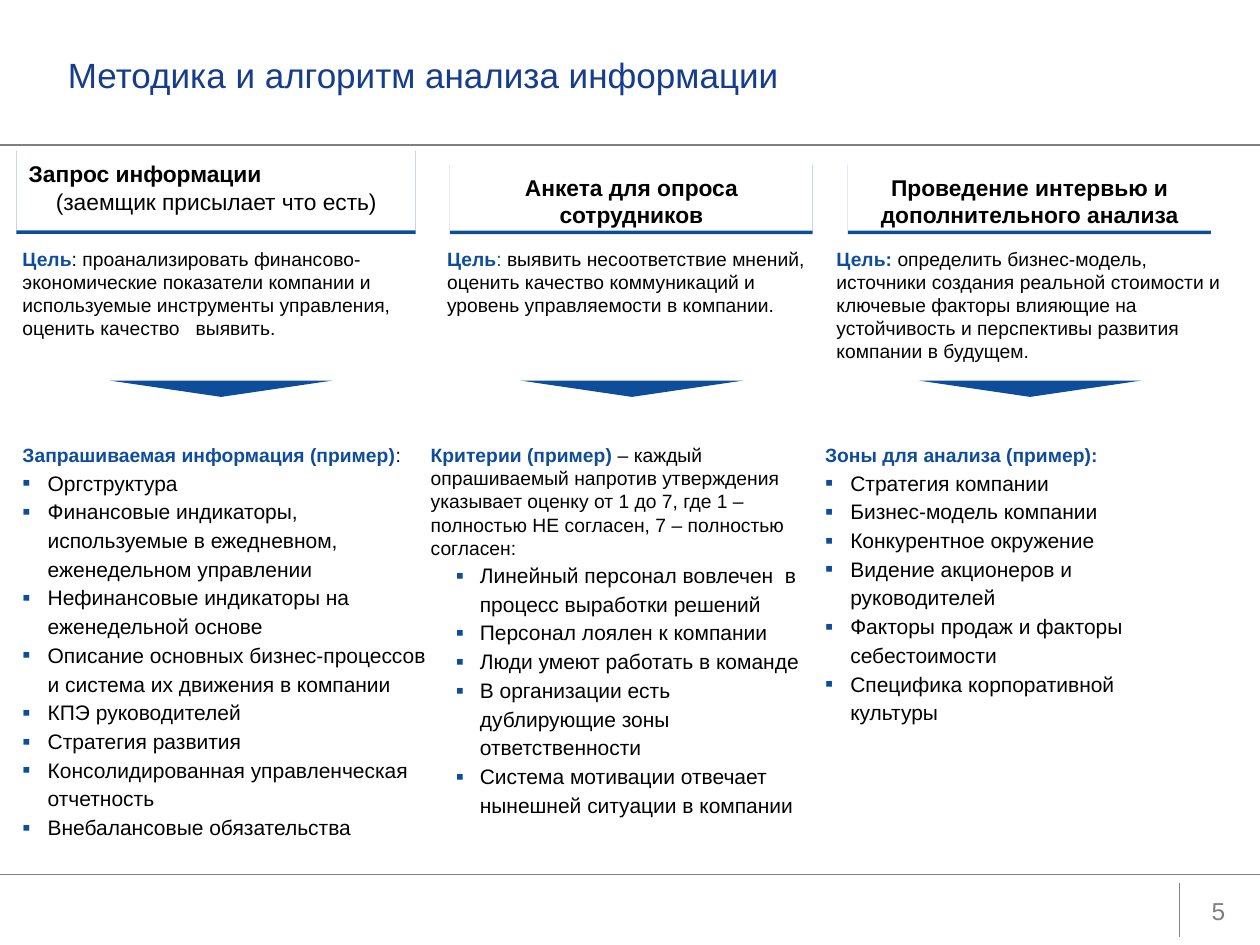
from lxml.etree import SubElement
from pptx import Presentation
from pptx.dml.color import RGBColor
from pptx.enum.shapes import MSO_CONNECTOR, MSO_SHAPE
from pptx.enum.text import MSO_ANCHOR, MSO_AUTO_SIZE, PP_ALIGN
from pptx.oxml.ns import qn
from pptx.util import Inches, Pt

BLUE, BLACK, WHITE = "0E4D99", "000000", "FFFFFF"
TITLE = "Методика и алгоритм анализа информации"
LEFT, MID = PP_ALIGN.LEFT, PP_ALIGN.CENTER

# Runs are (text, colour, bold); boxes are (left, top, width, height).
COLS = [
    {
        "head": [("Запрос информации", True, LEFT),
                 ("(заемщик присылает что есть)", False, MID)],
        "head_box": (0.13, 1.17, 3.17, 0.66),
        "goal": [("Цель", BLUE, True),
                 (": проанализировать финансово-экономические показатели компании "
                  "и используемые инструменты управления, оценить качество   выявить.",
                  BLACK, False)],
        "goal_box": (0.08, 1.91, 3.45, 0.84),
        "arrow": 0.87,
        "lead": [("Запрашиваемая информация (пример)", BLUE, True), (":", BLACK, False)],
        "list": ["Оргструктура",
                 "Финансовые индикаторы, используемые в ежедневном, еженедельном управлении",
                 "Нефинансовые индикаторы на еженедельной основе",
                 "Описание основных бизнес-процессов и система их движения в компании",
                 "КПЭ руководителей",
                 "Стратегия развития",
                 "Консолидированная управленческая отчетность",
                 "Внебалансовые обязательства"],
        "list_box": (0.08, 3.47, 3.45, 3.28),
        "level": 0,
    },
    {
        "head": [("Анкета для опроса сотрудников", True, MID)],
        "head_box": (3.57, 1.28, 2.88, 0.55),
        "goal": [("Цель", BLUE, True), (": ", BLUE, False),
                 ("выявить несоответствие мнений, оценить качество коммуникаций "
                  "и уровень управляемости в компании.", BLACK, False)],
        "goal_box": (3.45, 1.91, 3.16, 0.66),
        "arrow": 4.13,
        "lead": [("Критерии (пример)", BLUE, True),
                 (" – каждый опрашиваемый напротив утверждения указывает оценку "
                  "от 1 до 7, где 1 – полностью НЕ согласен, 7 – полностью согласен:",
                  BLACK, False)],
        "list": ["Линейный персонал вовлечен  в процесс выработки решений",
                 "Персонал лоялен к компании",
                 "Люди умеют работать в команде",
                 "В организации есть дублирующие зоны ответственности",
                 "Система мотивации отвечает нынешней ситуации в компании"],
        "list_box": (3.32, 3.47, 3.16, 3.08),
        "level": 1,
    },
    {
        "head": [("Проведение интервью и дополнительного анализа", True, MID)],
        "head_box": (6.73, 1.28, 2.88, 0.55),
        "goal": [("Цель: ", BLUE, True),
                 ("определить бизнес-модель, источники создания реальной стоимости "
                  "и ключевые факторы влияющие на устойчивость и перспективы развития "
                  "компании в будущем.", BLACK, False)],
        "goal_box": (6.54, 1.91, 3.42, 1.03),
        "arrow": 7.29,
        "lead": [("Зоны для анализа (пример):", BLUE, True)],
        "list": ["Стратегия компании",
                 "Бизнес-модель компании",
                 "Конкурентное окружение",
                 "Видение акционеров и руководителей",
                 "Факторы продаж и факторы себестоимости",
                 "Специфика корпоративной культуры"],
        "list_box": (6.45, 3.47, 2.95, 2.36),
        "level": 0,
    },
]
RULES = [((0, 1.15), (10, 1.15), "808080", 1),
         ((0, 6.94), (10, 6.94), "808080", 1),
         ((9.36, 7.01), (9.36, 7.44), "858585", 0.75)]
INDENT = [(0.2, -0.2), (0.39, -0.19)]  # margin and first line, by level

prs = Presentation()
prs.slide_width, prs.slide_height = Inches(10), Inches(7.5)
slide = prs.slides.add_slide(prs.slide_layouts[6])
shapes = slide.shapes


def rgb(code):
    return RGBColor.from_string(code)


def style(font, size, color=None, bold=None):
    font.name, font.size = "Arial", Pt(size)
    if color:
        font.color.rgb = rgb(color)
    if bold is not None:
        font.bold = bold


def shape(kind, box, fill):
    item = shapes.add_shape(kind, *map(Inches, box))
    item.shadow.inherit = False
    item.fill.solid()
    item.fill.fore_color.rgb = rgb(fill)
    item.line.fill.background()
    return item


def frame(item, anchor, inset=None):
    """Set up the text frame of a shape and return it."""
    text = item.text_frame
    text.word_wrap, text.vertical_anchor = True, anchor
    if inset is not None:
        text.margin_left = text.margin_right = Inches(inset)
        text.margin_top = text.margin_bottom = Inches(inset)
    return text


def textbox(box, anchor=MSO_ANCHOR.TOP):
    return frame(shapes.add_textbox(*map(Inches, box)), anchor)


def mixed(para, runs):
    """Fill a paragraph with runs of differing colour and weight."""
    style(para.font, 11)
    for words, color, bold in runs:
        run = para.add_run()
        run.text = words
        style(run.font, 11, color, bold)


def bullet(para, level):
    para.level = level
    para.line_spacing = 1.14
    props = para._p.get_or_add_pPr()
    margin, first = INDENT[level]
    props.set("marL", str(Inches(margin)))
    props.set("indent", str(Inches(first)))
    color = SubElement(props, qn("a:buClr"))
    SubElement(color, qn("a:srgbClr"), val=BLUE)
    SubElement(props, qn("a:buSzPct"), val="110000")
    SubElement(props, qn("a:buFont"), typeface="Arial")
    SubElement(props, qn("a:buChar"), char="▪")


def underline(item):
    """Give a shape a sharp blue shadow just below it."""
    effects = item._element.spPr.find(qn("a:effectLst"))
    cast = SubElement(effects, qn("a:outerShdw"), blurRad="0", dist=str(Pt(2)),
                      dir="5400000", algn="ctr", rotWithShape="0")
    SubElement(cast, qn("a:srgbClr"), val=BLUE)


def heading(lines, box):
    item = shape(MSO_SHAPE.RECTANGLE, box, WHITE)
    underline(item)
    text = frame(item, MSO_ANCHOR.TOP, 0.1)
    for i, (words, bold, align) in enumerate(lines):
        para = text.add_paragraph() if i else text.paragraphs[0]
        para.text, para.alignment = words, align
        style(para.font, 13, BLACK, bold)
    para.space_after = Pt(6)


def column(col):
    heading(col["head"], col["head_box"])

    goal = textbox(col["goal_box"])
    goal.auto_size = MSO_AUTO_SIZE.SHAPE_TO_FIT_TEXT
    mixed(goal.paragraphs[0], col["goal"])

    arrow = shape(MSO_SHAPE.ISOSCELES_TRIANGLE, (col["arrow"], 3.02, 1.77, 0.13), BLUE)
    arrow.rotation = 180

    text = textbox(col["list_box"])
    text.auto_size = MSO_AUTO_SIZE.SHAPE_TO_FIT_TEXT
    mixed(text.paragraphs[0], col["lead"])
    for words in col["list"]:
        para = text.add_paragraph()
        para.text = words
        bullet(para, col["level"])
        style(para.font, 12, BLACK)


for start, end, color, width in RULES:
    rule = shapes.add_connector(MSO_CONNECTOR.STRAIGHT, *map(Inches, start + end))
    rule.line.color.rgb, rule.line.width = rgb(color), Pt(width)
    SubElement(rule._element.spPr, qn("a:effectLst"))

page = shape(MSO_SHAPE.RECTANGLE, (9.42, 7.03, 0.5, 0.39), WHITE)
number = frame(page, MSO_ANCHOR.MIDDLE, 0.05).paragraphs[0]
number.text, number.alignment = "5", MID
style(number.font, 14, "7F7F7F")

title = textbox((0.44, 0, 9.32, 1.15), MSO_ANCHOR.MIDDLE).paragraphs[0]
title.text, title.line_spacing = TITLE, 1.1
style(title.font, 20, "153C8D")

for col in COLS:
    column(col)

prs.save("out.pptx")
